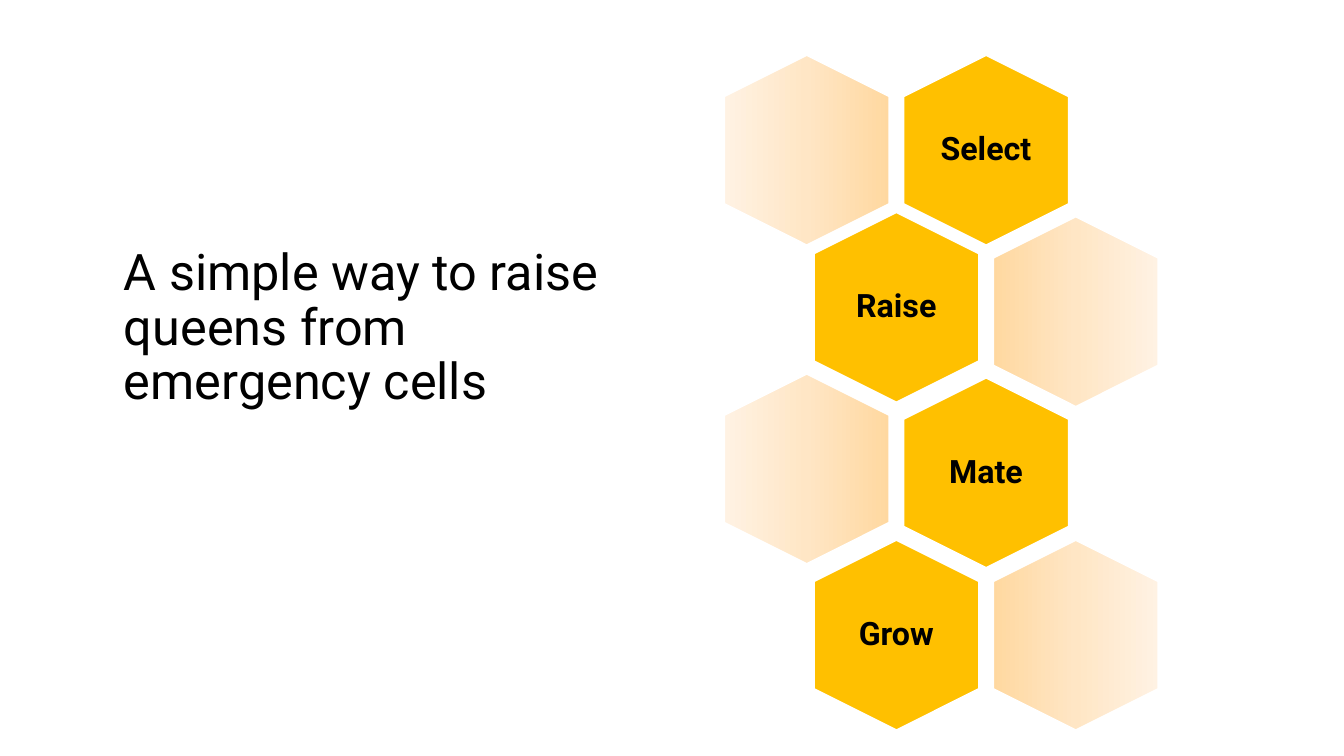
from copy import deepcopy
from dataclasses import dataclass

from lxml import etree
from pptx import Presentation
from pptx.dml.color import RGBColor
from pptx.enum.shapes import MSO_SHAPE
from pptx.enum.text import MSO_ANCHOR, MSO_AUTO_SIZE, PP_ALIGN
from pptx.oxml.ns import qn
from pptx.util import Cm, Pt

HEXAGON = MSO_SHAPE.HEXAGON
TOP, MIDDLE = MSO_ANCHOR.TOP, MSO_ANCHOR.MIDDLE
LEFT, CENTER = PP_ALIGN.LEFT, PP_ALIGN.CENTER
NO_AUTOFIT = MSO_AUTO_SIZE.NONE


@dataclass(frozen=True)
class Theme:
    font: str = "Roboto"
    text: str = "000000"
    outline: str = "FFFFFF"
    honey: str = "FFC000"
    fade: tuple = ((0, "FFD8A0"), (0.5, "FFE6C5"), (1, "FFF2E3"))
    statement_size: int = 36
    label_size: int = 23
    outline_width: float = 1.5


THEME = Theme()
HEX_W, HEX_H = 4.8, 4.17
LABEL_W, LABEL_H = 2.87, 3.3
COLUMN_LEFT, COLUMN_STEP = 17.93, 2.26

STATEMENT = "A simple way to raise queens from emergency cells"
STEPS = [("Select", 2, 1.7), ("Raise", 1, 5.66), ("Mate", 2, 9.83), ("Grow", 1, 13.92)]
EMPTY_CELLS = [(0, 1.7, 180), (3, 5.77, 0), (0, 9.73, 180), (3, 13.92, 0)]


def write_text(tf, text, size, bold=False, align=LEFT, anchor=TOP):
    tf.word_wrap = True
    tf.auto_size = NO_AUTOFIT
    tf.vertical_anchor = anchor
    p = tf.paragraphs[0]
    p.alignment = align
    p.line_spacing = 0.9
    p.space_before = Pt(0)
    r = p.add_run()
    r.text = text
    r.font.name = THEME.font
    r.font.size = Pt(size)
    r.font.bold = bold
    r.font.color.rgb = RGBColor.from_string(THEME.text)


def add_statement(slide):
    sp = slide.placeholders[1]
    sp.left, sp.top, sp.width, sp.height = Cm(2.87), Cm(6.1), Cm(12.57), Cm(9)
    pPr = sp.text_frame.paragraphs[0]._p.get_or_add_pPr()
    pPr.set("marL", "0")
    pPr.set("indent", "0")
    etree.SubElement(pPr, qn("a:buNone"))
    write_text(sp.text_frame, STATEMENT, THEME.statement_size)


def add_hexagon(shapes, column, top):
    left = COLUMN_LEFT + column * COLUMN_STEP
    sp = shapes.add_shape(HEXAGON, Cm(left), Cm(top), Cm(HEX_W), Cm(HEX_H))
    sp.rotation = 90
    sp.adjustments[0] = 0.25
    sp.shadow.inherit = False
    sp.line.color.rgb = RGBColor.from_string(THEME.outline)
    sp.line.width = Pt(THEME.outline_width)
    return sp


def add_step(shapes, text, column, top):
    sp = add_hexagon(shapes, column, top)
    sp.fill.solid()
    sp.fill.fore_color.rgb = RGBColor.from_string(THEME.honey)
    left = sp.left + (sp.width - Cm(LABEL_W)) // 2
    label_top = sp.top + (sp.height - Cm(LABEL_H)) // 2
    label = shapes.add_textbox(left, label_top, Cm(LABEL_W), Cm(LABEL_H))
    tf = label.text_frame
    tf.margin_left = tf.margin_right = tf.margin_top = tf.margin_bottom = Cm(0.25)
    write_text(tf, text, THEME.label_size, bold=True, align=CENTER, anchor=MIDDLE)


def add_empty_cell(shapes, column, top, angle):
    sp = add_hexagon(shapes, column, top)
    sp.fill.gradient()
    sp.fill.gradient_angle = angle
    grad = sp._element.spPr.find(qn("a:gradFill"))
    grad.set("rotWithShape", "0")
    stops = grad.find(qn("a:gsLst"))
    stops.append(deepcopy(stops[0]))
    for stop, (position, color) in zip(sp.fill.gradient_stops, THEME.fade):
        stop.position = position
        stop.color.rgb = RGBColor.from_string(color)


def main():
    prs = Presentation()
    prs.slide_width, prs.slide_height = Cm(33.87), Cm(19.05)
    slide = prs.slides.add_slide(prs.slide_layouts[1])
    title = slide.shapes.title._element
    title.getparent().remove(title)
    add_statement(slide)
    honeycomb = slide.shapes.add_group_shape().shapes
    for step, cell in zip(STEPS, EMPTY_CELLS):
        add_step(honeycomb, *step)
        add_empty_cell(honeycomb, *cell)
    prs.save("out.pptx")


if __name__ == "__main__":
    main()
